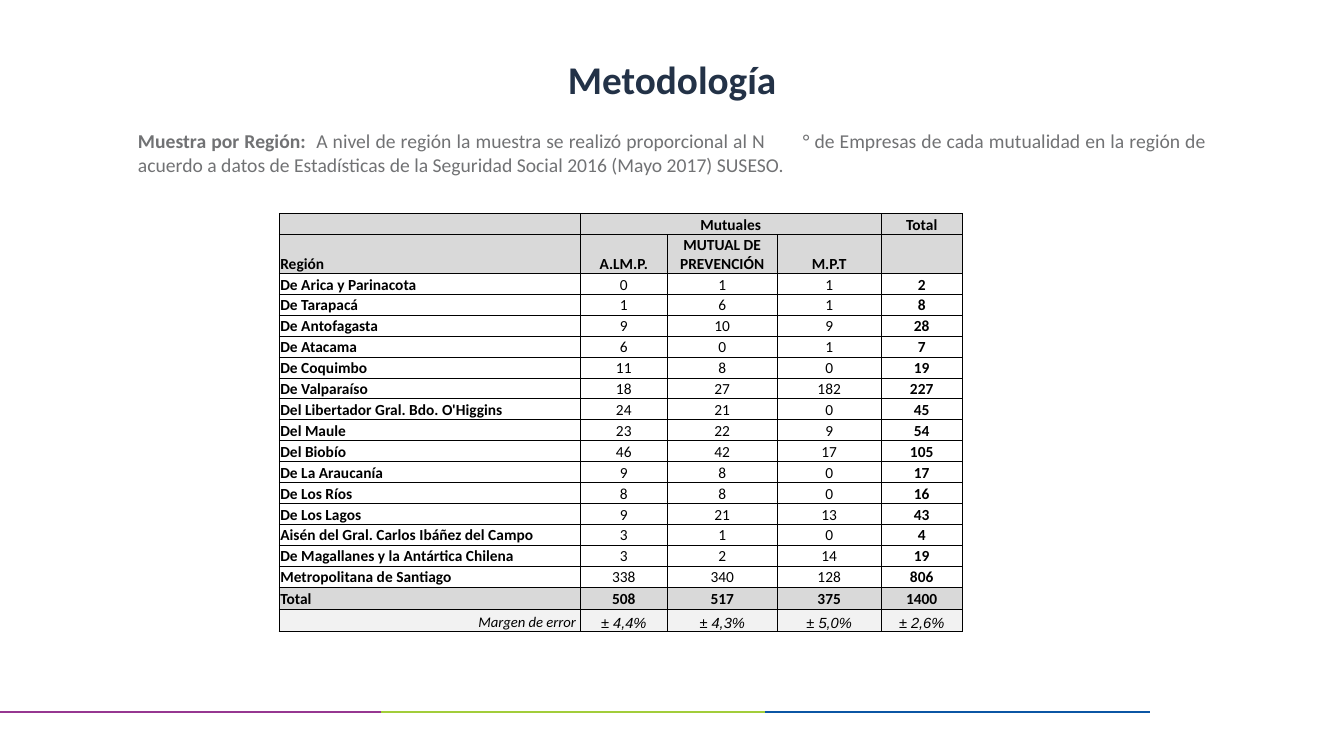
import itertools

import lxml.etree
import pptx
import pptx.dml.color
import pptx.enum.shapes
import pptx.enum.text
import pptx.oxml.ns
import pptx.util

ALIGN = pptx.enum.text.PP_ALIGN
ANCHOR = pptx.enum.text.MSO_ANCHOR
COLORS = {
    "navy": "233247",
    "gray": "717274",
    "black": "000000",
    "header": "D9D9D9",
    "margin": "F2F2F2",
    "purple": "963791",
    "green": "A2CD3A",
    "blue": "0B56A4",
}
COLUMN_SHARES = [22.4, 6.47, 8.18, 7.74, 6.03]
HEADERS = [
    ["", "Mutuales", "", "", "Total"],
    ["Región", "A.LM.P.", "MUTUAL DE PREVENCIÓN", "M.P.T", ""],
]
REGIONS = [
    ["De Arica y Parinacota", 0, 1, 1, 2],
    ["De Tarapacá", 1, 6, 1, 8],
    ["De Antofagasta", 9, 10, 9, 28],
    ["De Atacama", 6, 0, 1, 7],
    ["De Coquimbo", 11, 8, 0, 19],
    ["De Valparaíso", 18, 27, 182, 227],
    ["Del Libertador Gral. Bdo. O'Higgins", 24, 21, 0, 45],
    ["Del Maule", 23, 22, 9, 54],
    ["Del Biobío", 46, 42, 17, 105],
    ["De La Araucanía", 9, 8, 0, 17],
    ["De Los Ríos", 8, 8, 0, 16],
    ["De Los Lagos", 9, 21, 13, 43],
    ["Aisén del Gral. Carlos Ibáñez del Campo", 3, 1, 0, 4],
    ["De Magallanes y la Antártica Chilena", 3, 2, 14, 19],
    ["Metropolitana de Santiago", 338, 340, 128, 806],
]
TOTALS = ["Total", 508, 517, 375, 1400]
ERRORS = ["Margen de error ", "± 4,4%", "± 4,3%", "± 5,0%", "± 2,6%"]


class SlideWriter:
    def __init__(self, deck):
        self.deck = deck
        self.page = deck.slides.add_slide(deck.slide_layouts[6])

    def across(self, percent):
        return round(self.deck.slide_width * percent / 100)

    def down(self, percent):
        return round(self.deck.slide_height * percent / 100)

    def color(self, name):
        return pptx.dml.color.RGBColor.from_string(COLORS[name])

    def style(self, para, size, color, bold=None, italic=None, name="Calibri"):
        font = para.font
        font.name, font.size = name, pptx.util.Pt(size)
        font.bold, font.italic = bold, italic
        font.color.rgb = self.color(color)

    def rule(self, left, right, top, color):
        line = self.page.shapes.add_connector(
            pptx.enum.shapes.MSO_CONNECTOR.STRAIGHT,
            self.across(left), self.down(top), self.across(right), self.down(top))
        line.line.color.rgb = self.color(color)
        line.line.width = pptx.util.Pt(1.5)
        lxml.etree.SubElement(line._element.spPr, pptx.oxml.ns.qn("a:effectLst"))

    def text(self, top, height, spans, size, color, align, anchor=ANCHOR.TOP, spacing=None):
        box = self.page.shapes.add_textbox(
            self.across(9.53), self.down(top), self.across(80.95), self.down(height))
        frame = box.text_frame
        frame.word_wrap = True
        frame.vertical_anchor = anchor
        para = frame.paragraphs[0]
        para.alignment, para.line_spacing = align, spacing
        self.style(para, size, color)
        for words, bold in spans:
            span = para.add_run()
            span.text, span.font.bold = words, bold

    def border(self, cell, side, points):
        properties = cell._tc.get_or_add_tcPr()
        line = lxml.etree.SubElement(
            properties, pptx.oxml.ns.qn(f"a:ln{side}"), w=str(pptx.util.Pt(points)))
        fill = lxml.etree.SubElement(line, pptx.oxml.ns.qn("a:solidFill"))
        lxml.etree.SubElement(fill, pptx.oxml.ns.qn("a:srgbClr"), val=COLORS["black"])

    def cell(self, cell, value, fill, align, borders, size, **font):
        for side, points in borders.items():
            self.border(cell, side, points)
        if fill:
            cell.fill.solid()
            cell.fill.fore_color.rgb = self.color(fill)
        else:
            cell.fill.background()
        cell.margin_left = cell.margin_right = cell.margin_top = pptx.util.Inches(0.01)
        cell.margin_bottom = 0
        cell.vertical_anchor = ANCHOR.BOTTOM
        para = cell.text_frame.paragraphs[0]
        para.alignment = align
        self.style(para, size, "black", **font)
        if value == "":
            lxml.etree.SubElement(
                para._p, pptx.oxml.ns.qn("a:endParaRPr"), sz=str(size * 100))
        else:
            para.add_run().text = str(value)

    def sample_table(self, left, top):
        rows = HEADERS + REGIONS + [TOTALS, ERRORS]
        heights = [2.77, 5.12] + [2.77] * len(REGIONS) + [2.93, 2.93]
        table = self.page.shapes.add_table(
            len(rows), len(COLUMN_SHARES), self.across(left), self.down(top),
            self.across(sum(COLUMN_SHARES)), self.down(sum(heights))).table
        table.first_row = table.horz_banding = False
        for column, share in zip(table.columns, COLUMN_SHARES):
            column.width = self.across(share)
        error_row = len(rows) - 1
        total_row = error_row - 1
        last_column = len(COLUMN_SHARES) - 1
        for row, values in enumerate(rows):
            table.rows[row].height = self.down(heights[row])
            is_error = row == error_row
            shaded = row < len(HEADERS) or row == total_row
            fill = "margin" if is_error else "header" if shaded else None
            for column, value in enumerate(values):
                align = ALIGN.CENTER
                if column == 0:
                    align = ALIGN.RIGHT if is_error else ALIGN.LEFT
                borders = {
                    "L": 1 if is_error and column == 0 else 0.5,
                    "R": 0.5,
                    "T": 1 if is_error else 0.5,
                    "B": 1 if row >= total_row else 0.5,
                }
                self.cell(
                    table.cell(row, column), value, fill, align, borders,
                    10.5 if is_error else 11,
                    bold=not is_error and (shaded or column in (0, last_column)),
                    italic=is_error,
                    name="Arial" if is_error and column else "Calibri")
        table.cell(0, 1).merge(table.cell(0, 3))


def main():
    deck = pptx.Presentation()
    deck.slide_width = pptx.util.Inches(13.33)
    deck.slide_height = pptx.util.Inches(7.5)
    writer = SlideWriter(deck)
    edges = itertools.pairwise([0, 28.36, 56.93, 85.6])
    for (left, right), color in zip(edges, ["purple", "green", "blue"]):
        writer.rule(left, right, 94.13, color)
    writer.text(16.4, 10.8, [
        ("Muestra por Región:  ", True),
        ("A nivel de región la muestra se realizó proporcional al N\t° de Empresas "
         "de cada mutualidad en la región de acuerdo a datos de Estadísticas de la "
         "Seguridad Social 2016 (Mayo 2017) SUSESO.", False),
    ], 14, "gray", ALIGN.JUSTIFY)
    writer.text(6.27, 9.2, [("Metodología", True)], 28, "navy",
                ALIGN.CENTER, ANCHOR.MIDDLE, 0.9)
    writer.sample_table(20.78, 28.27)
    deck.save("out.pptx")


if __name__ == "__main__":
    main()
